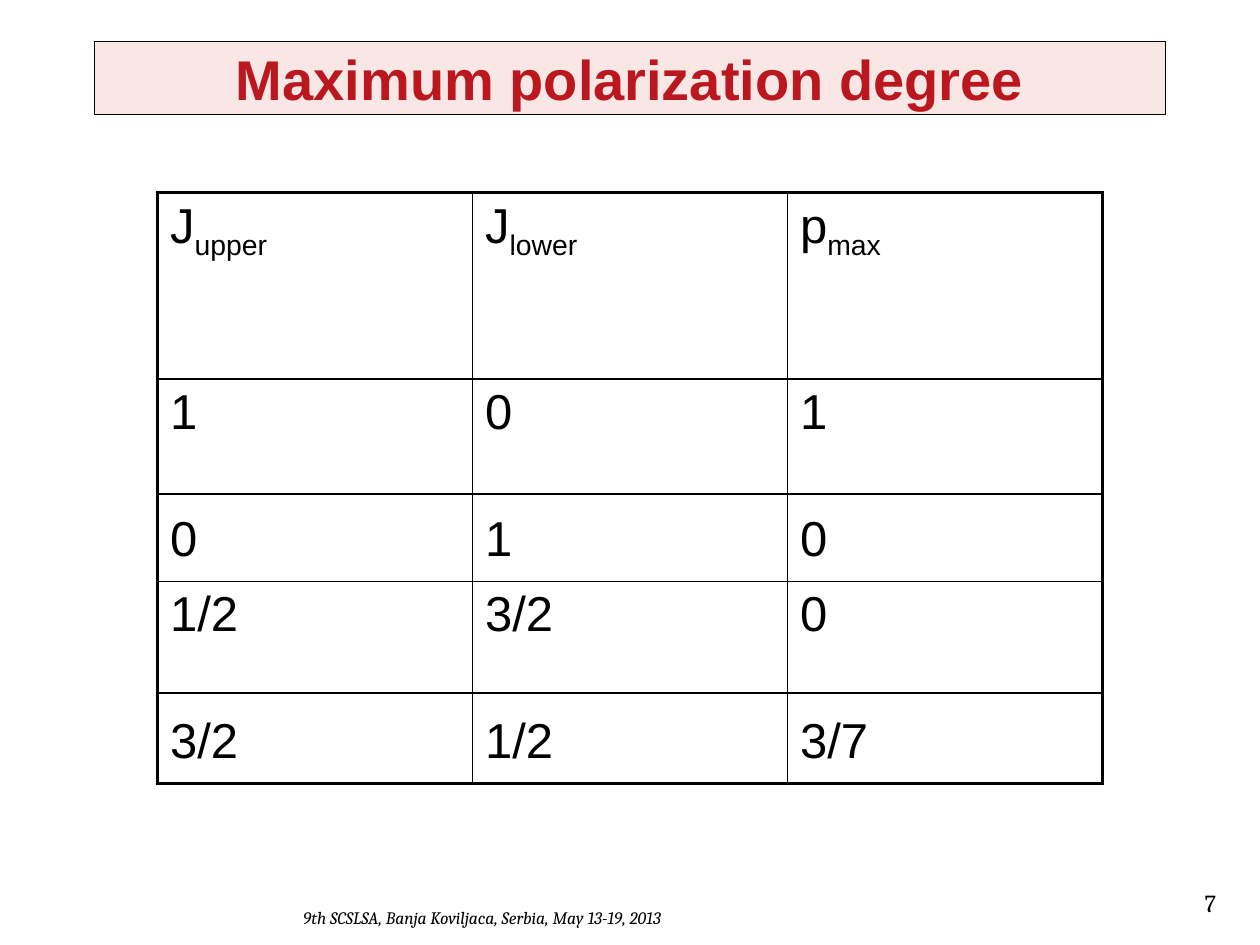
from pptx import Presentation, util as u
from pptx.dml.color import RGBColor
from pptx.enum import shapes, text
from pptx.oxml import parse_xml
from pptx.oxml.ns import nsdecls, qn
from lxml import etree

BLACK = RGBColor(0, 0, 0)
WHITE = RGBColor(255, 255, 255)
RED = RGBColor(0xBA, 0x17, 0x1F)
PINK = RGBColor(0xF9, 0xE6, 0xE3)


def style(par, face, size, color, align=text.PP_ALIGN.LEFT):
    par.alignment = align
    par.font.name = face
    par.font.size = u.Pt(size)
    par.font.color.rgb = color


def edge(cell, side, width):
    cell._tc.get_or_add_tcPr().append(parse_xml(
        f'<a:ln{side} {nsdecls("a")} w="{u.Pt(width)}"><a:solidFill>'
        f'<a:srgbClr val="{BLACK}"/></a:solidFill></a:ln{side}>'))


deck = Presentation()
deck.slide_width, deck.slide_height = u.Inches(10), u.Inches(7.5)
slide = deck.slides.add_slide(deck.slide_layouts[5])

title = slide.shapes.title
title.left, title.top = u.Inches(0.75), u.Inches(0.33)
title.width, title.height = u.Inches(8.5), u.Inches(0.58)
title.fill.solid()
title.fill.fore_color.rgb = PINK
tint = title._element.spPr.find(qn("a:solidFill"))[0]
etree.SubElement(tint, qn("a:alpha")).set("val", "92000")
title.line.color.rgb = BLACK
title.line.width = u.Pt(0.5)
title.text_frame.text = "Maximum polarization degree"
title.text_frame.vertical_anchor = text.MSO_ANCHOR.MIDDLE
head = title.text_frame.paragraphs[0]
style(head, "Arial", 32, RED, text.PP_ALIGN.CENTER)
head.font.bold = True

foot = slide.shapes.add_shape(
    shapes.MSO_SHAPE.RECTANGLE,
    u.Inches(2.16), u.Inches(7.14), u.Inches(3.33), u.Inches(0.28))
foot.shadow.inherit = False
foot.fill.solid()
foot.fill.fore_color.rgb = WHITE
foot.line.fill.background()
foot.text_frame.word_wrap = True
foot.text_frame.text = "9th SCSLSA, Banja Koviljaca, Serbia, May 13-19, 2013"
note = foot.text_frame.paragraphs[0]
style(note, "Cambria", 10, BLACK, text.PP_ALIGN.CENTER)
note.font.italic = True

page = slide.shapes.add_textbox(
    u.Inches(8.58), u.Inches(7), u.Inches(1.17), u.Inches(0.33))
page.text_frame.word_wrap = True
page.text_frame.text = "7"
style(page.text_frame.paragraphs[0], "Cambria", 14, BLACK, text.PP_ALIGN.RIGHT)

heads = [("J", "upper"), ("J", "lower"), ("p", "max")]
pairs = [
    [("1", "0"), ("0", "1"), ("1", "0")],
    [("1/2", "3/2"), ("3/2", "1/2"), ("0", "3/7")],
]
table = slide.shapes.add_table(
    3, 3, u.Inches(1.25), u.Inches(1.53), u.Inches(7.5), u.Inches(4.6)).table
table.first_row = table.horz_banding = False
for row, tall in zip(table.rows, (1.48, 1.56, 1.56)):
    row.height = u.Inches(tall)

for r, row in enumerate([heads] + pairs):
    for c, pair in enumerate(row):
        cell = table.cell(r, c)
        for side, outer in (("L", c == 0), ("R", c == 2),
                            ("T", r == 0), ("B", r == 2)):
            edge(cell, side, 2.25 if outer else 1)
        cell.fill.solid()
        cell.fill.fore_color.rgb = WHITE
        frame = cell.text_frame
        if r == 0:
            for word in pair:
                run = frame.paragraphs[0].add_run()
                run.text = word
            run._r.get_or_add_rPr().set("baseline", "-25000")
        else:
            frame.text = "\n".join(pair)
            frame.paragraphs[1].space_before = u.Pt(41)
        for par in frame.paragraphs:
            style(par, "Arial", 28, BLACK)

for y in (3.92, 5.5):
    rule = slide.shapes.add_connector(
        shapes.MSO_CONNECTOR.STRAIGHT,
        u.Inches(1.25), u.Inches(y), u.Inches(8.75), u.Inches(y))
    rule.line.color.rgb = BLACK
    rule.line.width = u.Pt(0.75)
    etree.SubElement(rule._element.spPr, qn("a:effectLst"))

deck.save("out.pptx")
